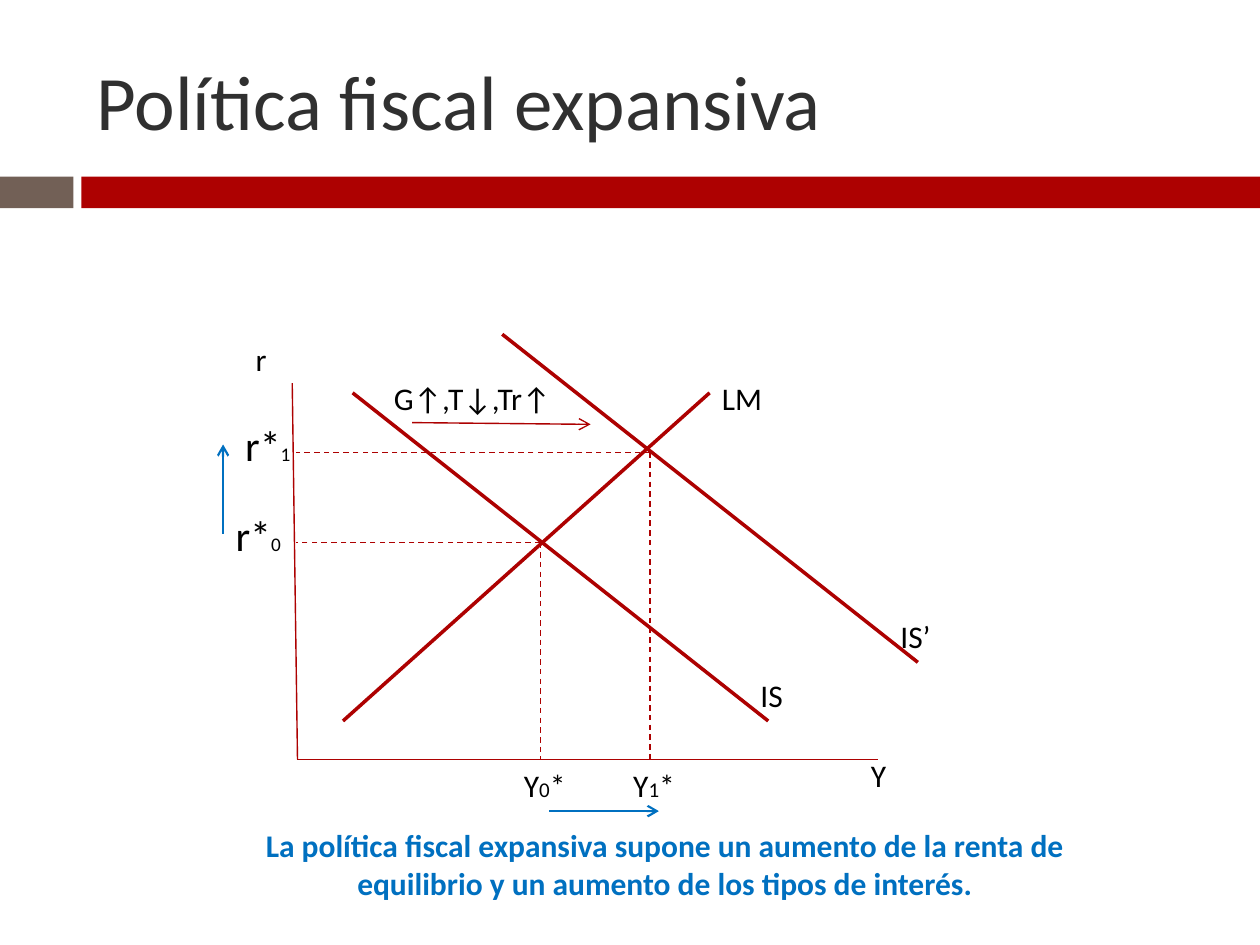
from lxml.etree import SubElement
from pptx import Presentation
from pptx.dml.color import RGBColor
from pptx.enum.dml import MSO_LINE
from pptx.enum.shapes import MSO_CONNECTOR, MSO_SHAPE
from pptx.enum.text import MSO_ANCHOR, PP_ALIGN
from pptx.oxml.ns import qn
from pptx.util import Pt

COLORS = {
    "red": "AD0101",
    "brown": "726056",
    "title": "303030",
    "black": "000000",
    "blue": "0070C0",
}
FONT = "Calibri"
ORIGIN = (170, 434)
IS_START, IS_END = (201.5, 224.5), (439, 412)
IS_SHIFT = (85.5, -33.5)
EQUILIBRIA = [(309, 310), (371.5, 258.5)]


def color(key):
    return RGBColor.from_string(COLORS[key])


def add_band(slide, left, width, fill):
    band = slide.shapes.add_shape(
        MSO_SHAPE.RECTANGLE, Pt(left), Pt(101), Pt(width), Pt(18)
    )
    band.shadow.inherit = False
    band.fill.solid()
    band.fill.fore_color.rgb = color(fill)
    band.line.fill.background()


def add_line(slide, start, end, width=0.79, stroke="red", dashed=False, arrow=False):
    line = slide.shapes.add_connector(
        MSO_CONNECTOR.STRAIGHT, *(Pt(value) for value in (*start, *end))
    )
    line.line.width = Pt(width)
    line.line.color.rgb = color(stroke)
    if dashed:
        line.line.dash_style = MSO_LINE.DASH
    properties = line._element.spPr
    if arrow:
        SubElement(properties.find(qn("a:ln")), qn("a:tailEnd"), type="arrow")
    SubElement(properties, qn("a:effectLst"))


def add_text(slide, box, runs, size=18, ink="black", bold=False,
             align=PP_ALIGN.LEFT, anchor=MSO_ANCHOR.TOP):
    frame = slide.shapes.add_textbox(*(Pt(value) for value in box)).text_frame
    frame.word_wrap = True
    frame.vertical_anchor = anchor
    paragraph = frame.paragraphs[0]
    paragraph.alignment = align
    paragraph.font.name = FONT
    paragraph.font.size = Pt(size)
    paragraph.font.bold = bold
    paragraph.font.color.rgb = color(ink)
    for text, run_size in runs:
        run = paragraph.add_run()
        run.text = text
        if run_size != size:
            run.font.size = Pt(run_size)


def add_label(slide, left, top, text, width=96.5, height=29):
    add_text(slide, (left, top, width, height), [(text, 18)])


def add_header(slide):
    add_band(slide, 0, 42, "brown")
    add_band(slide, 46.5, 673.5, "red")
    add_text(slide, (48, 18, 642, 78), [("Política fiscal expansiva", 44)],
             size=44, ink="title", anchor=MSO_ANCHOR.MIDDLE)


def add_curves(slide):
    add_line(slide, (167, 219), ORIGIN)
    add_line(slide, ORIGIN, (502, ORIGIN[1]))
    add_line(slide, (196, 412), (405.5, 224.5), width=2)
    add_line(slide, IS_START, IS_END, width=2)
    shifted = [
        (x + IS_SHIFT[0], y + IS_SHIFT[1]) for x, y in (IS_START, IS_END)
    ]
    add_line(slide, *shifted, width=2)
    add_label(slide, 405.5, 213, "LM")
    add_label(slide, 427.5, 382.5, "IS")
    add_label(slide, 507.5, 349, "IS’")
    add_label(slide, 490.5, 428.5, "Y", width=67.5)
    add_label(slide, 139, 191, "r", width=67.5)


def add_equilibria(slide):
    rate_boxes = [(127.5, 287.5, 51, 36), (133, 236, 51, 36)]
    for index, ((income, rate), rate_box) in enumerate(zip(EQUILIBRIA, rate_boxes)):
        add_line(slide, (income, rate), (income, ORIGIN[1]), dashed=True)
        add_line(slide, (income, rate), (169, rate), dashed=True)
        add_text(slide, (income - 16.75, ORIGIN[1], 44, 29),
                 [("Y", 18), (str(index), 12), ("*", 18)])
        add_text(slide, rate_box, [("r*", 24), (str(index), 11)], size=24)


def add_changes(slide):
    add_label(slide, 218, 213, "G↑,T↓,Tr↑", width=133, height=51)
    add_line(slide, (235.5, 241.5), (337.5, 242.5), arrow=True)
    add_line(slide, (314, 463.5), (376.5, 463.5), 1.25, "blue", arrow=True)
    add_line(slide, (127.5, 305), (127.5, 254), 1.25, "blue", arrow=True)


def add_conclusion(slide):
    conclusion = (
        "La política fiscal expansiva supone un aumento de la renta de "
        "equilibrio y un aumento de los tipos de interés."
    )
    add_text(slide, (144.5, 468.5, 471, 51), [(conclusion, 18)],
             ink="blue", bold=True, align=PP_ALIGN.CENTER)


def main():
    presentation = Presentation()
    presentation.slide_width = Pt(720)
    presentation.slide_height = Pt(540)
    slide = presentation.slides.add_slide(presentation.slide_layouts[6])
    add_header(slide)
    add_curves(slide)
    add_equilibria(slide)
    add_changes(slide)
    add_conclusion(slide)
    presentation.save("out.pptx")


if __name__ == "__main__":
    main()
